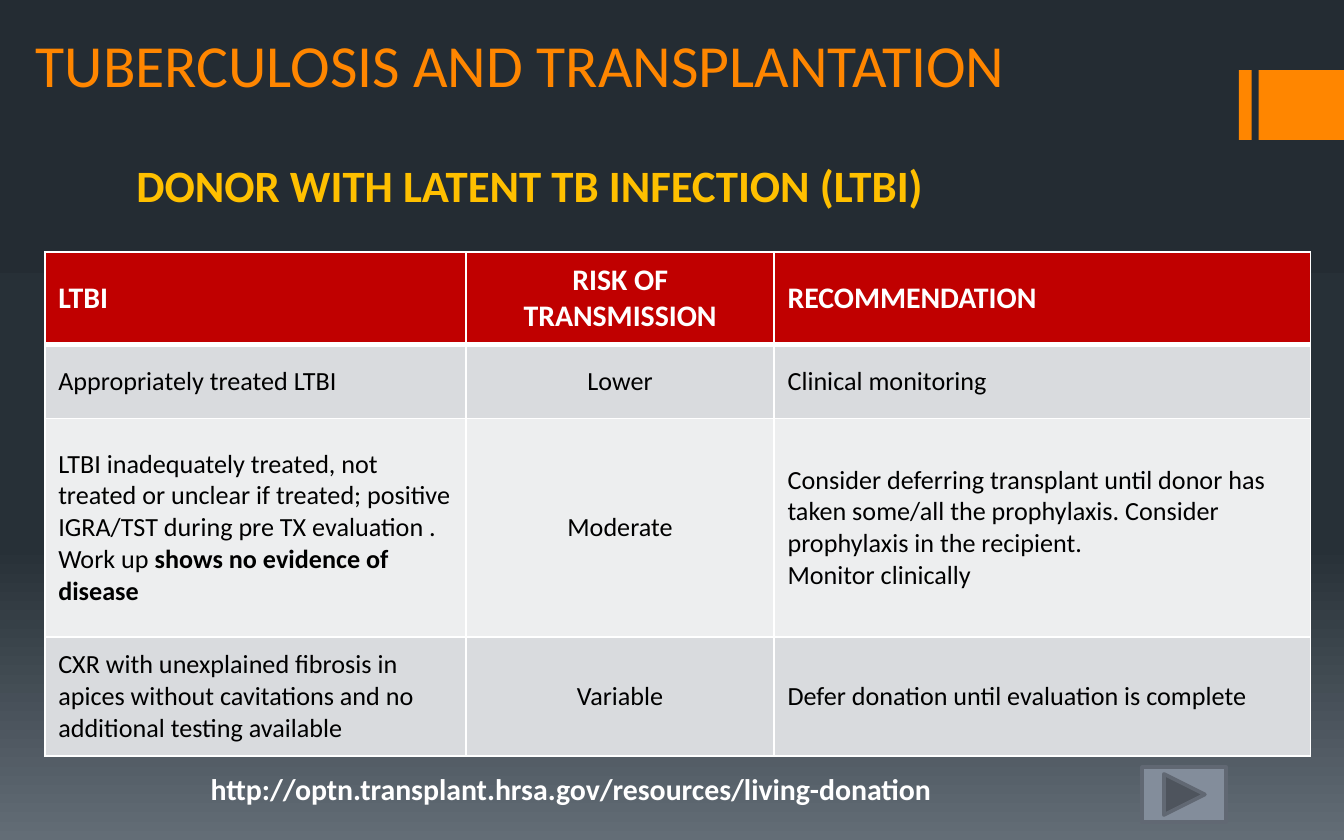
from copy import deepcopy

from lxml import etree
from pptx import Presentation
from pptx.dml.color import RGBColor
from pptx.enum.shapes import MSO_SHAPE
from pptx.enum.text import MSO_ANCHOR, PP_ALIGN
from pptx.oxml.ns import qn
from pptx.util import Emu, Pt

RECTANGLE = MSO_SHAPE.RECTANGLE
FORWARD_BUTTON = MSO_SHAPE.ACTION_BUTTON_FORWARD_OR_NEXT
LEFT, CENTER = PP_ALIGN.LEFT, PP_ALIGN.CENTER
TOP, MIDDLE, BOTTOM = MSO_ANCHOR.TOP, MSO_ANCHOR.MIDDLE, MSO_ANCHOR.BOTTOM

EMU_PER_PX = 9525
FONT = "Calibri"
ORANGE, GOLD, RED = "FF8600", "FFC000", "C00000"
WHITE, BLACK = "FFFFFF", "000000"
BANDS = ["D9DBDE", "EDEEEF"]
BACKGROUND_STOPS = [(0, "242C33"), (0.65, "273037"), (1, "636D76")]

COLUMN_WIDTHS = [301, 220, 383]
ROW_HEIGHTS = [66, 53, 156, 85]
COLUMN_ALIGNMENTS = [LEFT, CENTER, LEFT]
BOLD_ENDING = "shows no evidence of disease"
ROWS = [
    ["LTBI", "RISK OF TRANSMISSION", "RECOMMENDATION"],
    ["Appropriately treated LTBI", "Lower", "Clinical monitoring"],
    [
        "LTBI inadequately treated, not treated or unclear if treated; positive "
        "IGRA/TST during pre TX evaluation . Work up ",
        "Moderate",
        "Consider deferring transplant until donor has taken some/all the "
        "prophylaxis. Consider prophylaxis in the recipient.\nMonitor clinically",
    ],
    [
        "CXR with unexplained fibrosis in apices without cavitations and no "
        "additional testing available",
        "Variable",
        "Defer donation until evaluation is complete",
    ],
]


def px(value):
    return Emu(value * EMU_PER_PX)


def color(hex_string):
    return RGBColor.from_string(hex_string)


def set_background(slide):
    fill = slide.background.fill
    fill.gradient()
    fill.gradient_angle = 270
    stop_list = slide.element.find(".//" + qn("a:gsLst"))
    stop_list.append(deepcopy(stop_list[-1]))
    for stop, (position, hex_string) in zip(fill.gradient_stops, BACKGROUND_STOPS):
        stop.position = position
        stop.color.rgb = color(hex_string)


def format_text(text_frame, size, hex_string, bold=False, alignment=LEFT):
    for paragraph in text_frame.paragraphs:
        paragraph.alignment = alignment
        for run in paragraph.runs:
            run.font.name = FONT
            run.font.size = Pt(size)
            run.font.bold = bold
            run.font.color.rgb = color(hex_string)


def add_text(slide, box, text, size, hex_string, bold=False, alignment=LEFT, anchor=TOP):
    text_frame = slide.shapes.add_textbox(*map(px, box)).text_frame
    text_frame.word_wrap = True
    text_frame.vertical_anchor = anchor
    text_frame.text = text
    format_text(text_frame, size, hex_string, bold, alignment)


def add_block(slide, preset, box, fill, line=None):
    shape = slide.shapes.add_shape(preset, *map(px, box))
    shape.shadow.inherit = False
    shape.fill.solid()
    shape.fill.fore_color.rgb = color(fill)
    if line:
        shape.line.color.rgb = color(line)
        shape.line.width = Pt(2)
    else:
        shape.line.fill.background()


def set_borders(cell, top_width, bottom_width):
    properties = cell._tc.get_or_add_tcPr()
    widths = {"lnL": 1, "lnR": 1, "lnT": top_width, "lnB": bottom_width}
    for side, width in widths.items():
        border = etree.SubElement(properties, qn("a:" + side), w=str(Pt(width)))
        fill = etree.SubElement(border, qn("a:solidFill"))
        etree.SubElement(fill, qn("a:srgbClr"), val=WHITE)


def fill_cell(cell, text, row, alignment):
    is_header = row == 0
    set_borders(cell, 3 if row == 1 else 1, 3 if is_header else 1)
    cell.fill.solid()
    cell.fill.fore_color.rgb = color(RED if is_header else BANDS[(row - 1) % 2])
    cell.vertical_anchor = MIDDLE
    cell.text_frame.text = text
    size, text_color = (16, WHITE) if is_header else (14, BLACK)
    format_text(cell.text_frame, size, text_color, is_header, alignment)


def add_risk_table(slide):
    frame = slide.shapes.add_table(
        len(ROWS), len(COLUMN_WIDTHS),
        px(32), px(180), px(sum(COLUMN_WIDTHS)), px(sum(ROW_HEIGHTS)),
    )
    table = frame.table
    for column, width in zip(table.columns, COLUMN_WIDTHS):
        column.width = px(width)
    for table_row, height in zip(table.rows, ROW_HEIGHTS):
        table_row.height = px(height)
    for row, texts in enumerate(ROWS):
        for column, text in enumerate(texts):
            fill_cell(table.cell(row, column), text, row, COLUMN_ALIGNMENTS[column])
    text_frame = table.cell(2, 0).text_frame
    ending = text_frame.paragraphs[0].add_run()
    ending.text = BOLD_ENDING
    format_text(text_frame, 14, BLACK)
    ending.font.bold = True


def main():
    presentation = Presentation()
    presentation.slide_width = px(960)
    presentation.slide_height = px(600)
    slide = presentation.slides.add_slide(presentation.slide_layouts[6])
    set_background(slide)
    for left, width in [(885, 9), (899, 61)]:
        add_block(slide, RECTANGLE, (left, 50, width, 50), ORANGE)
    add_text(slide, (16, 12, 824, 64), "TUBERCULOSIS AND TRANSPLANTATION",
             32, ORANGE, anchor=BOTTOM)
    add_risk_table(slide)
    add_text(slide, (88, 108, 768, 48), "DONOR WITH LATENT TB INFECTION (LTBI)",
             24, GOLD, bold=True)
    add_text(slide, (104, 546, 608, 36),
             "http://optn.transplant.hrsa.gov/resources/living-donation",
             16, WHITE, bold=True, alignment=CENTER)
    add_block(slide, FORWARD_BUTTON, (816, 548, 60, 39), "838D9B", "616873")
    presentation.save("out.pptx")


if __name__ == "__main__":
    main()
